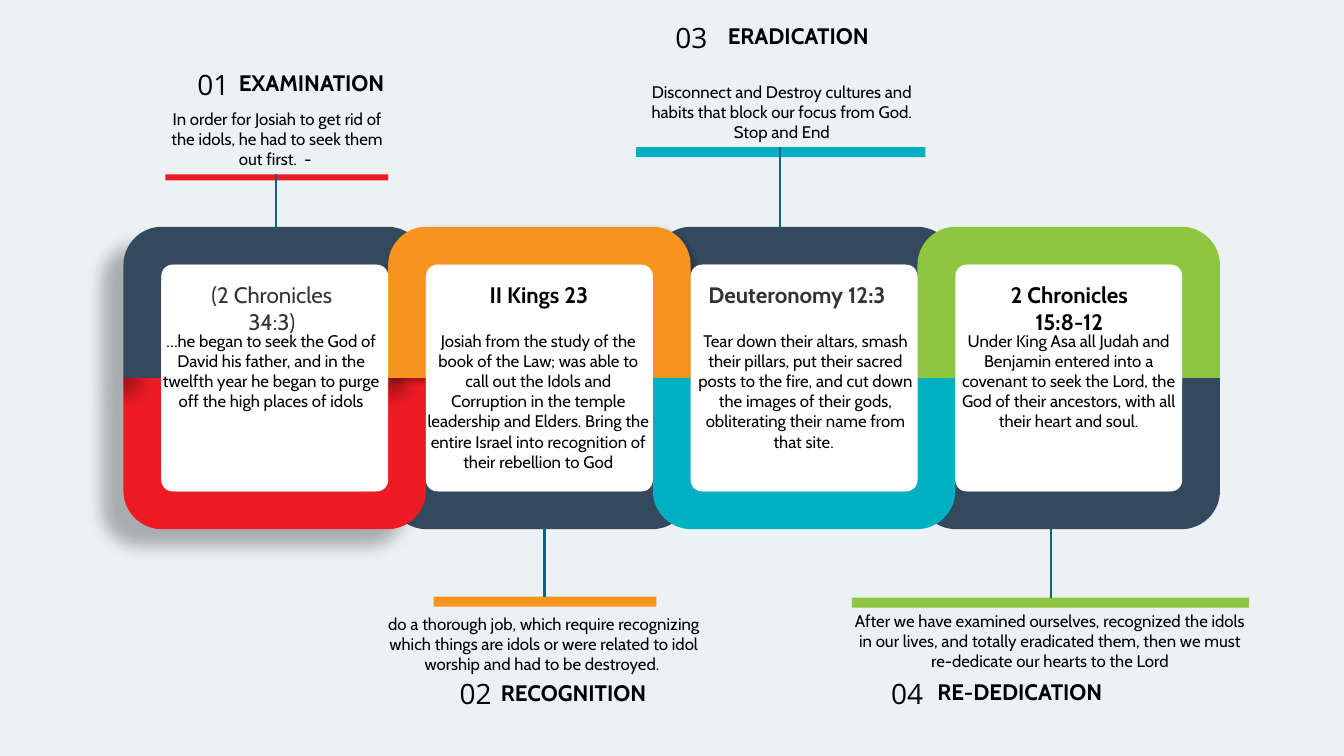
from copy import deepcopy

from lxml import etree
from pptx import Presentation
from pptx.dml.color import RGBColor
from pptx.enum.shapes import MSO_CONNECTOR, MSO_SHAPE
from pptx.enum.text import MSO_AUTO_SIZE, PP_ALIGN
from pptx.oxml.ns import qn
from pptx.util import Inches, Pt

RECTANGLE = MSO_SHAPE.RECTANGLE
ROUNDED = MSO_SHAPE.ROUNDED_RECTANGLE
STRAIGHT = MSO_CONNECTOR.STRAIGHT
GROW = MSO_AUTO_SIZE.SHAPE_TO_FIT_TEXT
LEFT, CENTER = PP_ALIGN.LEFT, PP_ALIGN.CENTER

COLORS = {
    "background": "ECF1F4", "navy": "34495E", "red": "ED1B24",
    "orange": "F7941D", "teal": "00AFC2", "green": "8EC63F",
    "white": "FFFFFF", "black": "000000", "gray": "333333", "stem": "156082",
}

deck = Presentation()
deck.slide_width, deck.slide_height = Inches(13.33), Inches(7.5)
page = deck.slides.add_slide(deck.slide_layouts[6])
page.background.fill.solid()
page.background.fill.fore_color.rgb = RGBColor.from_string(COLORS["background"])


def add_text(text, left, top, width, height, size=12, bold=False,
             align=CENTER, color="black", font="Cabin"):
    box = page.shapes.add_textbox(Inches(left), Inches(top), Inches(width), Inches(height))
    frame = box.text_frame
    frame.word_wrap = True
    frame.auto_size = GROW
    frame.text = text
    for paragraph in frame.paragraphs:
        paragraph.alignment = align
        for span in paragraph.runs:
            span.font.name = font
            span.font.size = Pt(size)
            span.font.bold = bold
            span.font.color.rgb = RGBColor.from_string(COLORS[color])
    return box


def paint(shape, color):
    shape.shadow.inherit = False
    shape.fill.solid()
    shape.fill.fore_color.rgb = RGBColor.from_string(COLORS[color])
    shape.line.fill.background()


# Chain geometry: each half frame is an arch with rounded corners
OUTER, MIDDLE, LAST_LEFT = 1.5, 3.75, 9.1
INNER = OUTER * 0.75
PITCH = OUTER + INNER
FIRST_LEFT = LAST_LEFT - 3 * PITCH
OUTER_BEND, INNER_BEND = OUTER - 0.38, INNER - OUTER / 12
ARCH = [
    (-OUTER, 0), (-OUTER, OUTER_BEND), (-OUTER_BEND, OUTER),
    (OUTER_BEND, OUTER), (OUTER, OUTER_BEND), (OUTER, 0),
    (INNER, 0), (INNER, INNER_BEND), (INNER_BEND, INNER),
    (-INNER_BEND, INNER), (-INNER, INNER_BEND), (-INNER, 0),
]
# Points reached by a curve, and whether that curve sets out vertically
CURVES = {2: True, 4: False, 8: True, 10: False}
ROUNDNESS = 0.55

# Shadow: opacity %, blur pt, distance pt, direction in degrees
WIDE_SHADOW = (28, 11.8, 19.7, 141)
SOFT_SHADOW = (30, 4.5, 2.6, 53)
# Half frames: column, side (-1 upper, 1 lower), colour, shadow
half_frames = [
    (3, 1, "navy", None),
    (1, 1, "navy", None),
    (0, 1, "red", WIDE_SHADOW),
    (0, -1, "navy", WIDE_SHADOW),
    (2, -1, "navy", None),
    (1, -1, "orange", SOFT_SHADOW),
    (2, 1, "teal", None),
    (3, -1, "green", None),
]
for column, side, color, shadow in half_frames:
    center = FIRST_LEFT + PITCH * column + OUTER
    points = [(Inches(center + x), Inches(MIDDLE + side * y)) for x, y in ARCH]
    builder = page.shapes.build_freeform(*points[0])
    builder.add_line_segments(points[1:], close=True)
    half = builder.convert_to_shape()
    paint(half, color)

    # Turn the corner segments into curves
    knots = list(half._element.iter(qn("a:pt")))
    for index, vertical in CURVES.items():
        start, end = knots[index - 1], knots[index]
        x1, y1, x2, y2 = [int(knot.get(axis)) for knot in (start, end) for axis in "xy"]
        corner_x, corner_y = (x1, y2) if vertical else (x2, y1)
        segment = end.getparent()
        segment.tag = qn("a:cubicBezTo")
        for position, (x, y) in enumerate([(x1, y1), (x2, y2)]):
            handle = deepcopy(end)
            handle.set("x", str(round(x + ROUNDNESS * (corner_x - x))))
            handle.set("y", str(round(y + ROUNDNESS * (corner_y - y))))
            segment.insert(position, handle)

    if shadow:
        opacity, blur, distance, angle = shadow
        effects = half._element.spPr.find(qn("a:effectLst"))
        outer = etree.SubElement(
            effects, qn("a:outerShdw"), blurRad=str(Pt(blur)), dist=str(Pt(distance)),
            dir=str(angle * 60000), algn="ctr", rotWithShape="0")
        tint = etree.SubElement(outer, qn("a:srgbClr"), val=COLORS["black"])
        etree.SubElement(tint, qn("a:alpha"), val=str(opacity * 1000))

# White cards: verse, its left, width, height, bold, colour, opacity %,
# then passage, its left and height
cards = [
    ("(2 Chronicles 34:3)", 1.87, 1.65, 0.64, False, "gray", 100,
     "…he began to seek the God of David his father, and in the twelfth year "
     "he began to purge off the high places of idols", 1.48, 0.91),
    ("II Kings 23", 4.52, 1.65, 0.37, True, "black", 100,
     "Josiah from the study of the book of the Law; was able to call out the Idols "
     "and Corruption in the temple leadership and Elders. Bring the entire Israel "
     "into recognition of their rebellion to God", 4.13, 1.72),
    ("Deuteronomy 12:3", 6.85, 2.11, 0.37, True, "black", 80,
     "Tear down their altars, smash their pillars, put their sacred posts to the fire, "
     "and cut down the images of their gods,\n"
     "obliterating their name from that site. ", 6.78, 1.31),
    ("2 Chronicles 15:8-12", 9.78, 1.65, 0.64, True, "black", 100,
     "Under King Asa all Judah and Benjamin entered into a covenant to seek the Lord, "
     "the God of their ancestors, with all their heart and soul.", 9.39, 1.11),
]
for column, (verse, left, width, height, bold, color, opacity,
             passage, passage_left, passage_height) in enumerate(cards):
    card = page.shapes.add_shape(
        ROUNDED, Inches(FIRST_LEFT + PITCH * column + OUTER - INNER),
        Inches(MIDDLE - INNER), Inches(2 * INNER), Inches(2 * INNER))
    card.adjustments[0] = 0.05
    paint(card, "white")
    heading = add_text(verse, left, 2.74, width, height, 16, bold, color=color)
    if opacity < 100:
        for tint in heading._element.iter(qn("a:srgbClr")):
            etree.SubElement(tint, qn("a:alpha"), val=str(opacity * 1000))
    add_text(passage, passage_left, 3.23, 2.42, passage_height)

# Steps: number, title and note with their boxes, bar, stem (x, from, to)
steps = [
    ("01", (1.86, 0.62, 0.73, 0.44), "EXAMINATION", (2.27, 0.64, 1.79, 0.37),
     "In order for Josiah to get rid of the idols, he had to seek them out first.  - ",
     (1.6, 1.03, 2.3, 0.71), "red", (1.64, 1.73, 2.21, 0.06), (2.74, 1.73, 2.28)),
    ("03", (6.6, 0.15, 0.94, 0.67), "ERADICATION", (7.12, 0.17, 2.27, 0.37),
     "Disconnect and Destroy cultures and habits that block our focus from God. "
     "Stop and End",
     (6.26, 0.76, 2.99, 0.71), "teal", (6.31, 1.46, 2.87, 0.1), (7.74, 1.46, 2.29)),
    ("02", (4.46, 6.66, 0.73, 0.67), "RECOGNITION", (4.87, 6.69, 1.71, 0.37),
     "do a thorough job, which require recognizing which things are idols or were "
     "related to idol worship and had to be destroyed. ",
     (3.54, 6.04, 3.71, 0.71), "orange", (4.3, 5.92, 2.21, 0.1), (5.4, 5.92, 5.24)),
    ("04", (8.74, 6.66, 1.3, 0.67), "RE-DEDICATION", (9.2, 6.68, 2.74, 0.57),
     "After we have examined ourselves, recognized the idols in our lives, and totally "
     "eradicated them, then we must re-dedicate our hearts to the Lord",
     (8.36, 6.01, 4.11, 1.08), "green", (8.45, 5.93, 3.94, 0.1), (10.42, 5.93, 5.25)),
]
for (number, number_area, title, title_area, note, note_area,
     color, bar_area, (stem_x, stem_from, stem_to)) in steps:
    add_text(number, *number_area, size=20, align=LEFT, font="Open Sans")
    add_text(title, *title_area, size=16, bold=True, align=LEFT)
    add_text(note, *note_area)
    bar = page.shapes.add_shape(RECTANGLE, *[Inches(length) for length in bar_area])
    paint(bar, color)
    stem = page.shapes.add_connector(
        STRAIGHT, Inches(stem_x), Inches(stem_from), Inches(stem_x), Inches(stem_to))
    stem.line.color.rgb = RGBColor.from_string(COLORS["stem"])
    stem.line.width = Pt(1.5)
    etree.SubElement(stem._element.spPr, qn("a:effectLst"))

deck.save("out.pptx")
